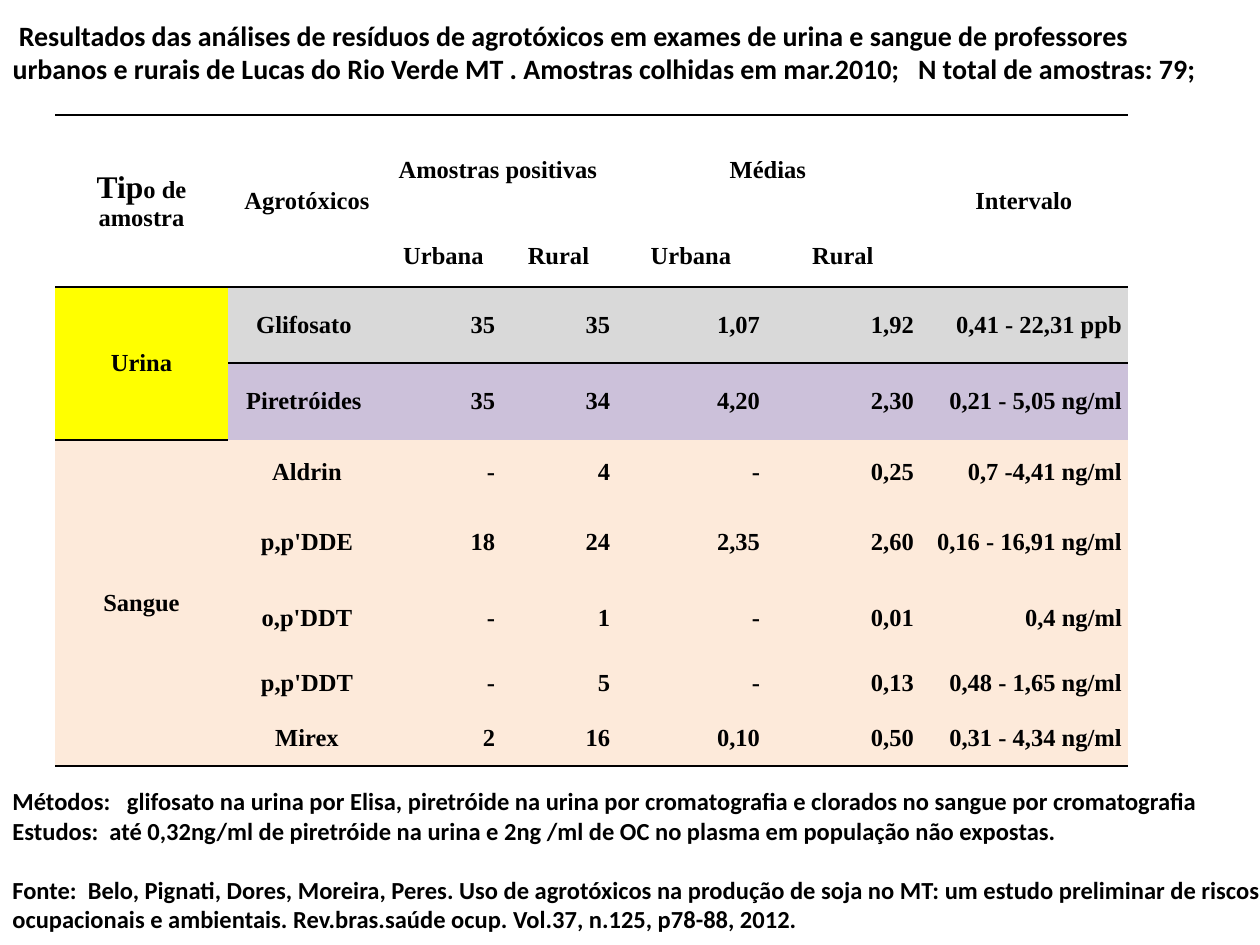
import pptx
import pptx.dml.color
import pptx.enum.text
import pptx.oxml
import pptx.oxml.ns
import pptx.util

ALIGN = pptx.enum.text.PP_ALIGN
ANCHOR = pptx.enum.text.MSO_ANCHOR
PLAIN_TABLE = "{2D5ABB26-0587-4C30-8999-92F81FD0307C}"


def px(length):
    return pptx.util.Emu(round(length * 914400 / 126))


def color(value):
    return pptx.dml.color.RGBColor.from_string(value)


class SlideWriter:
    ink = "000000"
    text_font = "Calibri"
    table_font = "Times New Roman"
    table_size = 14

    def __init__(self, presentation):
        self.slide = presentation.slides.add_slide(presentation.slide_layouts[5])

    def run(self, paragraph, text, size, font):
        run = paragraph.add_run()
        run.text = text
        run.font.name = font
        run.font.size = pptx.util.Pt(size)
        run.font.bold = True
        run.font.color.rgb = color(self.ink)

    def fill_frame(self, shape, box, lines, size):
        shape.left, shape.top, shape.width, shape.height = map(px, box)
        frame = shape.text_frame
        frame.word_wrap = True
        frame.auto_size = pptx.enum.text.MSO_AUTO_SIZE.NONE
        frame.vertical_anchor = ANCHOR.TOP
        for index, (text, space_before) in enumerate(lines):
            paragraph = frame.add_paragraph() if index else frame.paragraphs[0]
            paragraph.alignment = ALIGN.LEFT
            paragraph.space_before = pptx.util.Pt(space_before)
            self.run(paragraph, text, size, self.text_font)

    def title(self, box, lines, size):
        self.fill_frame(self.slide.shapes.title, box, lines, size)

    def text(self, box, lines, size):
        shape = self.slide.shapes.add_textbox(*map(px, box))
        self.fill_frame(shape, box, lines, size)

    def table(self, left, top, columns, rows):
        shape = self.slide.shapes.add_table(
            len(rows), len(columns), px(left), px(top), px(sum(columns)), px(sum(rows))
        )
        table = shape.table
        table.first_row = table.horz_banding = False
        style = table._tbl.tblPr.find(pptx.oxml.ns.qn("a:tableStyleId"))
        style.text = PLAIN_TABLE
        for column, width in zip(table.columns, columns):
            column.width = px(width)
        for row, height in zip(table.rows, rows):
            row.height = px(height)
        return table

    def cell(self, cell, runs, alignment, fill):
        cell.margin_left = cell.margin_right = px(6)
        cell.margin_top = cell.margin_bottom = 0
        cell.vertical_anchor = ANCHOR.MIDDLE
        if fill:
            cell.fill.solid()
            cell.fill.fore_color.rgb = color(fill)
        else:
            cell.fill.background()
        paragraph = cell.text_frame.paragraphs[0]
        paragraph.alignment = alignment
        for text, size in runs:
            self.run(paragraph, text, size, self.table_font)

    def border(self, cell, sides):
        properties = cell._tc.get_or_add_tcPr()
        for index, side in enumerate(sides):
            line = pptx.oxml.parse_xml(
                f'<a:ln{side} {pptx.oxml.ns.nsdecls("a")} w="12700"><a:solidFill>'
                f'<a:srgbClr val="{self.ink}"/></a:solidFill></a:ln{side}>'
            )
            properties.insert(index, line)


TITLE = [
    (" Resultados das análises de resíduos de agrotóxicos em exames de urina e sangue de professores", 0),
    ("urbanos e rurais de Lucas do Rio Verde MT . Amostras colhidas em mar.2010;   N total de amostras: 79;", 0),
]
NOTES = [
    ("Métodos:   glifosato na urina por Elisa, piretróide na urina por cromatografia e clorados no sangue por cromatografia", 0),
    ("Estudos:  até 0,32ng/ml de piretróide na urina e 2ng /ml de OC no plasma em população não expostas.", 0),
    ("Fonte:  Belo, Pignati, Dores, Moreira, Peres. Uso de agrotóxicos na produção de soja no MT: um estudo preliminar "
     "de riscos ocupacionais e ambientais. Rev.bras.saúde ocup. Vol.37, n.125, p78-88, 2012.", 17),
]
COLUMNS = [173, 158, 115, 115, 150, 154, 208]
ROWS = [110, 62, 76, 77, 64, 76, 76, 55, 55]
SAMPLES = [
    ["Tipo de amostra", "Agrotóxicos", "Amostras positivas ", "", "Médias", "", "Intervalo"],
    ["", "", "Urbana", "Rural", "Urbana", "Rural", ""],
    ["Urina", "Glifosato ", "35", "35", "1,07", "1,92", "0,41 - 22,31 ppb"],
    ["", "Piretróides ", "35", "34", "4,20", "2,30", "0,21 - 5,05 ng/ml"],
    ["Sangue", "Aldrin", "-", "4", "-", "0,25", "0,7 -4,41 ng/ml"],
    ["", "p,p'DDE", "18", "24", "2,35", "2,60", "0,16 - 16,91 ng/ml"],
    ["", "o,p'DDT", "-", "1", "-", "0,01", "0,4 ng/ml"],
    ["", "p,p'DDT", "-", "5", "-", "0,13", "0,48 - 1,65 ng/ml"],
    ["", "Mirex", "2", "16", "0,10", "0,50", "0,31 - 4,34 ng/ml"],
]
MERGES = [
    ((0, 0), (1, 0)), ((0, 1), (1, 1)), ((0, 2), (0, 3)), ((0, 4), (0, 5)),
    ((0, 6), (1, 6)), ((2, 0), (3, 0)), ((4, 0), (8, 0)),
]
HEADER_ROWS = 2
ROW_FILLS = [None] * HEADER_ROWS + ["D9D9D9", "CCC1DA"] + ["FDEADA"] * 5
URINE_ROWS = (2, 3)
URINE_FILL = "FFFF00"
TOP_RULES = (0, HEADER_ROWS)
BOTTOM_RULES = (HEADER_ROWS - 1, len(ROWS) - 1)


def add_samples(writer):
    table = writer.table(55, 115, COLUMNS, ROWS)
    for first, last in MERGES:
        table.cell(*first).merge(table.cell(*last))
    for row, texts in enumerate(SAMPLES):
        for column, text in enumerate(texts):
            cell = table.cell(row, column)
            centered = row < HEADER_ROWS or column < 2
            fill = URINE_FILL if column == 0 and row in URINE_ROWS else ROW_FILLS[row]
            runs = [(text, writer.table_size)] if text else []
            if (row, column) == (0, 0):
                runs = [(text[:3], 18), (text[3:], writer.table_size)]
            writer.cell(cell, runs, ALIGN.CENTER if centered else ALIGN.RIGHT, fill)
            last_row = row + cell.span_height - 1 if cell.is_merge_origin else row
            sides = ["T"] * (row in TOP_RULES) + ["B"] * (last_row in BOTTOM_RULES)
            writer.border(cell, sides)


def main():
    presentation = pptx.Presentation()
    presentation.slide_width = px(1260)
    presentation.slide_height = px(945)
    writer = SlideWriter(presentation)
    add_samples(writer)
    writer.title((0, 12, 1304, 118), TITLE, 16)
    writer.text((0, 780, 1310, 190), NOTES, 14)
    presentation.save("out.pptx")


if __name__ == "__main__":
    main()
